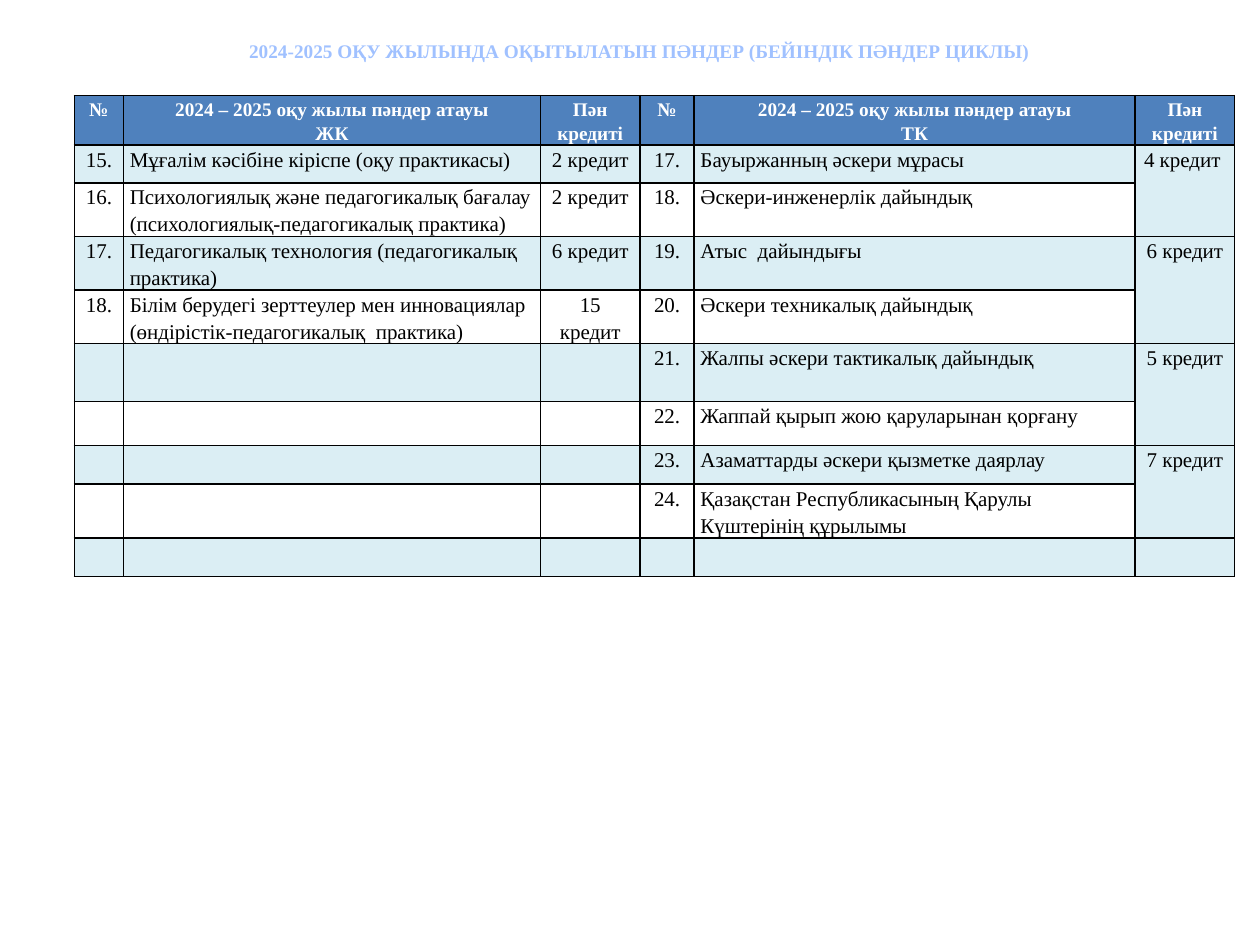
from lxml.etree import SubElement
from pptx import Presentation
from pptx.dml.color import RGBColor
from pptx.enum.text import MSO_ANCHOR, PP_ALIGN
from pptx.oxml.ns import qn
from pptx.util import Inches, Pt

FONT = "Times New Roman"
COLORS = {"title": "A0C1FF", "head": "4F81BD", "band": "DBEEF4",
          "white": "FFFFFF", "black": "000000"}


def add_text(para, text, size, color, bold):
    para.alignment = PP_ALIGN.CENTER
    run = para.add_run()
    run.text = text
    run.font.name = FONT
    run.font.size = Pt(size)
    run.font.bold = bold
    run.font.color.rgb = RGBColor.from_string(COLORS[color])


def add_edges(cell):
    """Draw a thin black border on all four sides of a cell."""
    props = cell._tc.get_or_add_tcPr()
    for at, side in enumerate(("lnL", "lnR", "lnT", "lnB")):
        line = SubElement(props, qn(f"a:{side}"), w=str(Pt(1)))
        fill = SubElement(line, qn("a:solidFill"))
        SubElement(fill, qn("a:srgbClr"), val=COLORS["black"])
        props.insert(at, line)


prs = Presentation()
prs.slide_width, prs.slide_height = Inches(10), Inches(7.5)
slide = prs.slides.add_slide(prs.slide_layouts[5])

title = slide.shapes.title
title.left, title.top = Inches(0.51), Inches(0.21)
title.width, title.height = Inches(9.13), Inches(0.39)
title.text_frame.vertical_anchor = MSO_ANCHOR.MIDDLE
add_text(title.text_frame.paragraphs[0],
         "2024-2025 ОҚУ ЖЫЛЫНДА ОҚЫТЫЛАТЫН ПӘНДЕР (БЕЙІНДІК ПӘНДЕР ЦИКЛЫ)",
         11, "title", True)

name = "2024 – 2025 оқу жылы пәндер атауы"
rows = [
    ["№", f"{name}\nЖК", "Пән кредиті", "№", f"{name}\nТК", "Пән кредиті"],
    ["15.", "Мұғалім кәсібіне кіріспе (оқу практикасы)", "2 кредит",
     "17.", "Бауыржанның әскери мұрасы", "4 кредит "],
    ["16.", "Психологиялық және педагогикалық бағалау "
     "(психологиялық-педагогикалық практика)", "2 кредит",
     "18.", "Әскери-инженерлік дайындық", ""],
    ["17.", "Педагогикалық технология (педагогикалық практика)", "6 кредит",
     "19.", "Атыс  дайындығы", "6 кредит"],
    ["18.", "Білім берудегі зерттеулер мен инновациялар "
     "(өндірістік-педагогикалық  практика)", "15 кредит",
     "20.", "Әскери техникалық дайындық", ""],
    ["", "", "", "21.", "Жалпы әскери тактикалық дайындық", "5 кредит"],
    ["", "", "", "22.", "Жаппай қырып жою қаруларынан қорғану", ""],
    ["", "", "", "23.", "Азаматтарды әскери қызметке даярлау", "7 кредит"],
    ["", "", "", "24.", "Қазақстан Республикасының Қарулы Күштерінің құрылымы", ""],
    [""] * 6,
]
widths = [0.39, 3.31, 0.79, 0.43, 3.5, 0.79]
heights = [0.39, 0.3, 0.3, 0.32, 0.31, 0.46, 0.35, 0.3, 0.3, 0.3]

table = slide.shapes.add_table(
    len(rows), len(widths), Inches(0.59), Inches(0.76),
    Inches(sum(widths)), Inches(sum(heights))).table
table.horz_banding = False
for col, width in zip(table.columns, widths):
    col.width = Inches(width)
for row, height in zip(table.rows, heights):
    row.height = Inches(height)

# Each pair of body rows shares one credit cell in the last column.
for top in range(1, 9, 2):
    table.cell(top, 5).merge(table.cell(top + 1, 5))

for r, texts in enumerate(rows):
    head = r == 0
    for c, text in enumerate(texts):
        cell = table.cell(r, c)
        cell.margin_left = cell.margin_right = Inches(0.05)
        cell.margin_top = cell.margin_bottom = 0
        shade = "head" if head else "band" if r % 2 else "white"
        cell.fill.solid()
        cell.fill.fore_color.rgb = RGBColor.from_string(COLORS[shade])
        add_edges(cell)
        if not text:
            continue
        frame = cell.text_frame
        for i, line in enumerate(text.split("\n")):
            para = frame.add_paragraph() if i else frame.paragraphs[0]
            add_text(para, line, 11 if head else 12,
                     "white" if head else "black", head)
            para.line_spacing = 1.15
            if c in (1, 4) and not head:
                para.alignment = PP_ALIGN.LEFT

prs.save("out.pptx")
